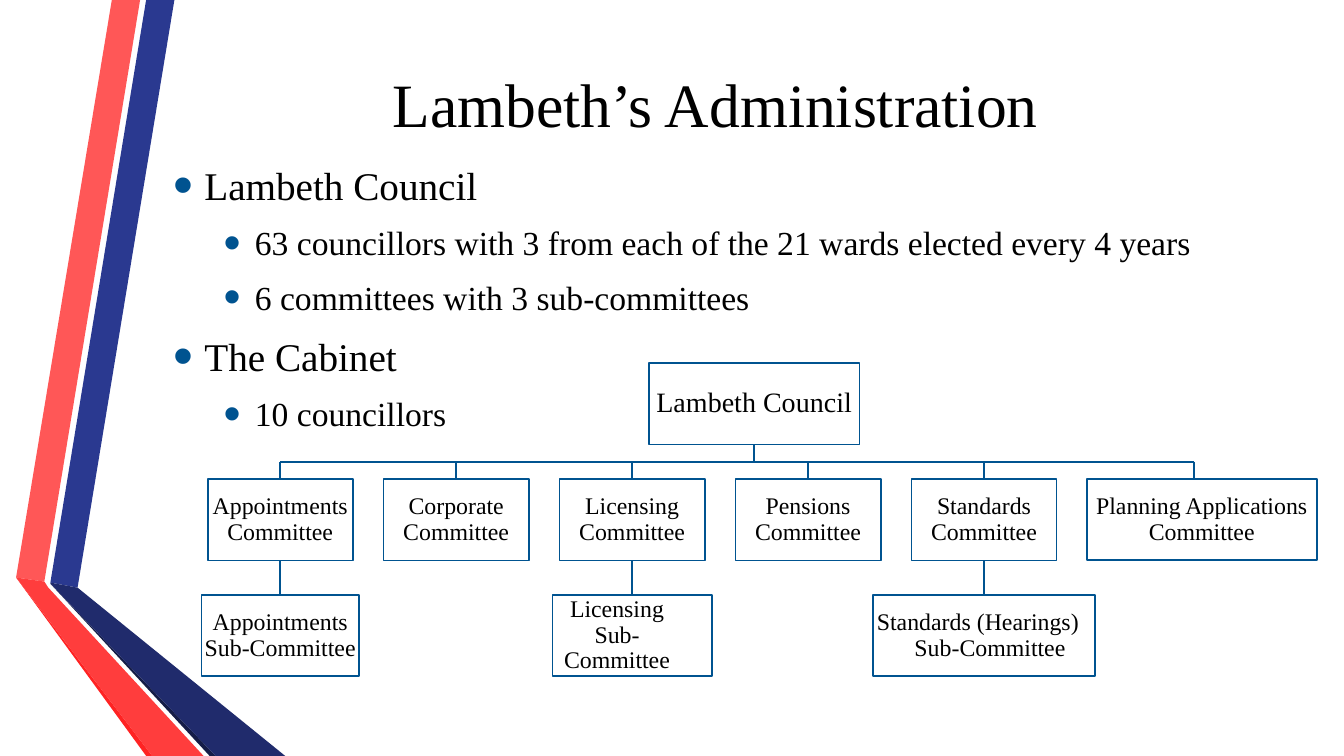
from lxml import etree
from pptx import Presentation
from pptx.dml.color import RGBColor
from pptx.enum import shapes, text
from pptx.oxml import ns
from pptx.util import Inches, Pt

FONT = "Times New Roman"
BLUE = "005390"
BOX_HEIGHT = 0.81
COUNCIL_CENTRE, COUNCIL_TOP = 7.48, 3.6
BUS_TOP, COMMITTEE_TOP, SUB_TOP = 4.58, 4.75, 5.9
FIRST_CENTRE, CENTRE_STEP = 2.78, 1.745
PLANNING_DROP, PLANNING_CENTRE = 11.84, 11.92

RIBBONS = [
    ("2A3990", [(0.5, 5.78), (0.77, 5.83), (1.73, 0), (1.45, 0)]),
    ("FF5757", [(1.39, 0), (1.11, 0), (0.16, 5.73), (0.44, 5.77)]),
    ("FF2323", [(0.16, 5.73), (1.45, 7.5), (1.51, 7.5)]),
    ("151D48", [(0.5, 5.79), (2.08, 7.5), (2.14, 7.5)]),
    ("202B6C", [(0.5, 5.79), (2.14, 7.5), (2.83, 7.5), (0.77, 5.83), (0.5, 5.78)]),
    ("FF3D3D", [(2.02, 7.5), (0.48, 5.83), (0.44, 5.77), (0.16, 5.73), (1.51, 7.5)]),
]
BULLETS = [
    (0, "Lambeth Council"),
    (1, "63 councillors with 3 from each of the 21 wards elected every 4 years"),
    (1, "6 committees with 3 sub-committees"),
    (0, "The Cabinet"),
    (1, "10 councillors"),
]
COMMITTEES = ["Appointments", "Corporate", "Licensing", "Pensions", "Standards"]
SUB_COMMITTEES = [
    (0, 1.56, [("Appointments Sub-Committee", 0)]),
    (2, 1.58, [("Licensing", -0.15), ("Sub-Committee", 0)]),
    (4, 2.2, [("Standards (Hearings)", -0.06), ("Sub-Committee", 0.12)]),
]


def colour(value):
    return RGBColor.from_string(value)


def style(para, size):
    para.font.name = FONT
    para.font.size = Pt(size)
    para.font.color.rgb = colour("000000")


def add_ribbon(page, fill, points):
    corners = [(Inches(x), Inches(y)) for x, y in points]
    builder = page.shapes.build_freeform(*corners[0], scale=1)
    builder.add_line_segments(corners[1:], close=True)
    ribbon = builder.convert_to_shape()
    ribbon.shadow.inherit = False
    ribbon.fill.solid()
    ribbon.fill.fore_color.rgb = colour(fill)
    ribbon.line.fill.background()


def add_text_area(page, top, height):
    area = page.shapes.add_textbox(Inches(1.62), Inches(top), Inches(10.96), Inches(height))
    area.text_frame.word_wrap = True
    return area.text_frame


def add_title(page, words):
    frame = add_text_area(page, 0.5, 1.05)
    frame.vertical_anchor = text.MSO_ANCHOR.MIDDLE
    frame.text = words
    frame.paragraphs[0].alignment = text.PP_ALIGN.CENTER
    style(frame.paragraphs[0], 44)


def add_bullet(para, level):
    properties = para._p.get_or_add_pPr()
    properties.set("marL", str(Inches(0.31 + 0.5 * level)))
    properties.set("indent", str(Inches(-0.31)))
    bullet_colour = etree.SubElement(properties, ns.qn("a:buClr"))
    etree.SubElement(bullet_colour, ns.qn("a:srgbClr"), val=BLUE)
    etree.SubElement(properties, ns.qn("a:buSzPct"), val="145000")
    etree.SubElement(properties, ns.qn("a:buFont"), typeface="Arial")
    etree.SubElement(properties, ns.qn("a:buChar"), char="•")


def add_bullet_list(page, items):
    frame = add_text_area(page, 1.55, 5.46)
    frame.text = "\n".join(words for level, words in items)
    for number, (para, (level, words)) in enumerate(zip(frame.paragraphs, items)):
        para.level = level
        if number:
            para.space_before = Pt(10 if level else 10.8)
        add_bullet(para, level)
        style(para, 24 if level else 28)


def add_box(page, centre, top, width, lines, size=17, line_width=1.25):
    box = page.shapes.add_shape(
        shapes.MSO_SHAPE.RECTANGLE,
        Inches(centre - width / 2), Inches(top), Inches(width), Inches(BOX_HEIGHT))
    box.shadow.inherit = False
    box.fill.solid()
    box.fill.fore_color.rgb = colour("FFFFFF")
    box.line.color.rgb = colour(BLUE)
    box.line.width = Pt(line_width)
    frame = box.text_frame
    frame.word_wrap = True
    frame.vertical_anchor = text.MSO_ANCHOR.MIDDLE
    frame.margin_left = frame.margin_right = Inches(0.01)
    frame.margin_top = frame.margin_bottom = Inches(0.01)
    frame.text = "\n".join(words for words, shift in lines)
    for para, (words, shift) in zip(frame.paragraphs, lines):
        para.alignment = text.PP_ALIGN.CENTER
        para.line_spacing = 0.9
        if shift:
            side = "marL" if shift > 0 else "marR"
            para._p.get_or_add_pPr().set(side, str(Inches(2 * abs(shift))))
        style(para, size)
    return box


def add_link(page, start, end, upper=None, lower=None):
    link = page.shapes.add_connector(
        shapes.MSO_CONNECTOR.STRAIGHT, *(Inches(length) for length in start + end))
    link.line.color.rgb = colour(BLUE)
    link.line.width = Pt(1.25)
    etree.SubElement(link._element.spPr, ns.qn("a:effectLst"))
    if upper is not None:
        link.begin_connect(upper, 2)
    if lower is not None:
        link.end_connect(lower, 0)


def add_council_chart(page):
    council = add_box(page, COUNCIL_CENTRE, COUNCIL_TOP, 2.09, [("Lambeth Council", 0)], 20)
    add_link(page, (COUNCIL_CENTRE, COUNCIL_TOP + BOX_HEIGHT), (COUNCIL_CENTRE, BUS_TOP), council)
    add_link(page, (FIRST_CENTRE, BUS_TOP), (PLANNING_DROP, BUS_TOP))

    centres = [FIRST_CENTRE + CENTRE_STEP * number for number in range(len(COMMITTEES))]
    committees = []
    for name, centre in zip(COMMITTEES, centres):
        box = add_box(page, centre, COMMITTEE_TOP, 1.44, [(name + " Committee", 0)])
        add_link(page, (centre, BUS_TOP), (centre, COMMITTEE_TOP), lower=box)
        committees.append(box)

    add_link(page, (PLANNING_DROP, BUS_TOP), (PLANNING_DROP, COMMITTEE_TOP))
    add_box(page, PLANNING_CENTRE, COMMITTEE_TOP, 2.28,
            [("Planning Applications Committee", 0)], line_width=1.5)

    for number, width, lines in SUB_COMMITTEES:
        centre = centres[number]
        box = add_box(page, centre, SUB_TOP, width, lines)
        add_link(page, (centre, COMMITTEE_TOP + BOX_HEIGHT), (centre, SUB_TOP),
                 committees[number], box)


def main():
    deck = Presentation()
    deck.slide_width, deck.slide_height = Inches(13.33), Inches(7.5)
    page = deck.slides.add_slide(deck.slide_layouts[6])
    for fill, points in RIBBONS:
        add_ribbon(page, fill, points)
    add_title(page, "Lambeth’s Administration")
    add_bullet_list(page, BULLETS)
    add_council_chart(page)
    deck.save("out.pptx")


if __name__ == "__main__":
    main()
